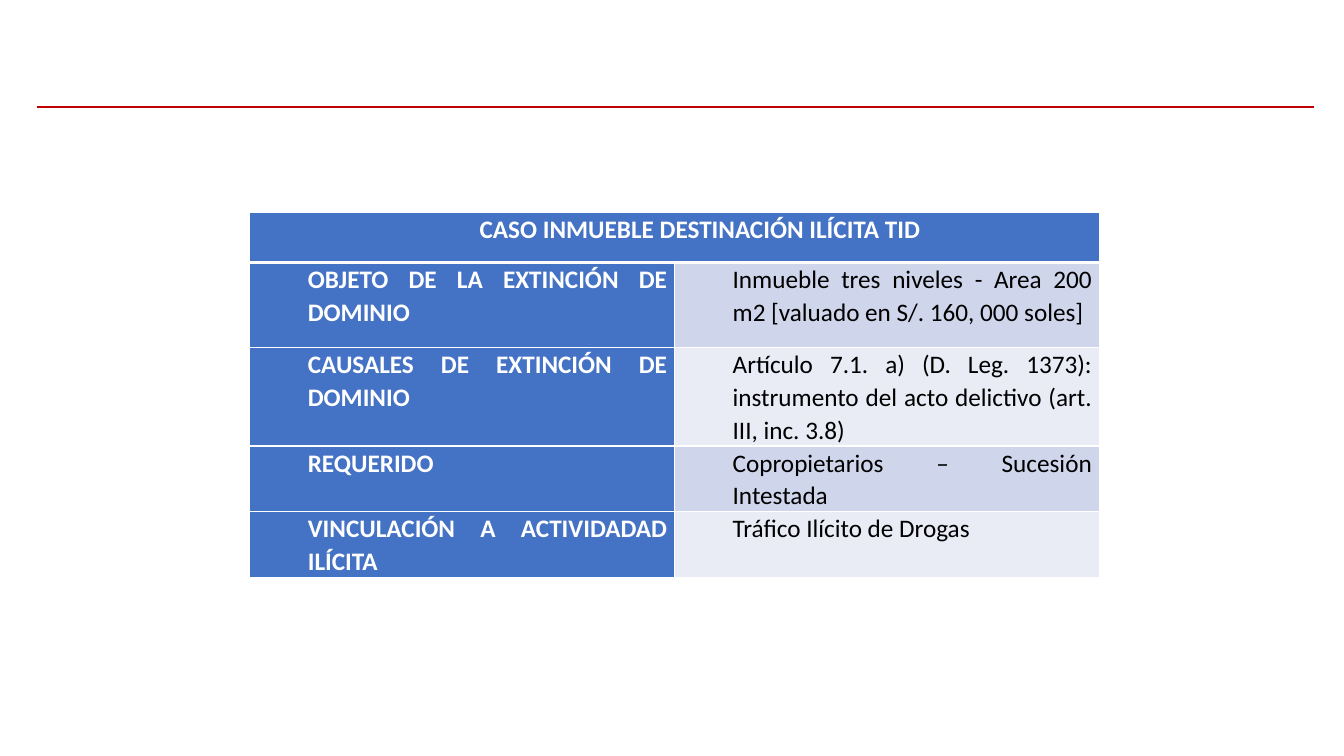
"""Build the slide with the property case table."""
from dataclasses import dataclass

from pptx import Presentation
from pptx.dml.color import RGBColor
from pptx.enum.shapes import MSO_CONNECTOR
from pptx.enum.text import PP_ALIGN
from pptx.oxml.ns import qn
from pptx.util import Pt
from lxml import etree

STRAIGHT = MSO_CONNECTOR.STRAIGHT
CENTER = PP_ALIGN.CENTER
JUSTIFY = PP_ALIGN.JUSTIFY


@dataclass(frozen=True)
class Theme:
    """Colours and type of the slide."""
    font: str = "Calibri"
    size: float = 18
    rule: str = "C00000"
    head: str = "4472C4"
    bands: tuple = ("CFD5EA", "E9EBF5")
    light: str = "FFFFFF"
    dark: str = "000000"


class Page:
    """Draw elements on one slide in one theme."""

    def __init__(self, slide, theme):
        """Keep the slide and its theme."""
        self.slide = slide
        self.theme = theme

    def line(self, left, right, y, width):
        """Draw a level rule."""
        rule = self.slide.shapes.add_connector(
            STRAIGHT, Pt(left), Pt(y), Pt(right), Pt(y))
        rule.line.color.rgb = RGBColor.from_string(self.theme.rule)
        rule.line.width = Pt(width)
        etree.SubElement(rule._element.spPr, qn("a:effectLst"))

    def edge(self, cell, side, width):
        """Draw one border of a cell."""
        props = cell._tc.get_or_add_tcPr()
        line = etree.SubElement(props, qn(f"a:ln{side}"), w=str(Pt(width)))
        fill = etree.SubElement(line, qn("a:solidFill"))
        etree.SubElement(fill, qn("a:srgbClr"), val=self.theme.light)

    def cell(self, cell, text, fill, label, align, after, top=1, bottom=1):
        """Fill one cell with a styled paragraph."""
        for side, width in zip("LRTB", (1, 1, top, bottom)):
            self.edge(cell, side, width)
        cell.fill.solid()
        cell.fill.fore_color.rgb = RGBColor.from_string(fill)
        cell.margin_left = cell.margin_right = Pt(5.4)
        cell.margin_top = cell.margin_bottom = 0
        cell.text = text
        para = cell.text_frame.paragraphs[0]
        para._p.get_or_add_pPr().set("marL", str(Pt(36)))
        para.alignment = align
        para.line_spacing = 1.07
        para.space_after = Pt(after)
        font = para.font
        font.name = self.theme.font
        font.size = Pt(self.theme.size)
        font.bold = label
        color = self.theme.light if label else self.theme.dark
        font.color.rgb = RGBColor.from_string(color)

    def table(self, title, facts, left, top, width, heights):
        """Draw a titled table of labels and facts."""
        theme = self.theme
        grid = self.slide.shapes.add_table(
            len(heights), 2, Pt(left), Pt(top), Pt(width), Pt(sum(heights))).table
        grid.first_row = grid.horz_banding = False
        for row, height in zip(grid.rows, heights):
            row.height = Pt(height)
        grid.cell(0, 0).merge(grid.cell(0, 1))
        self.cell(grid.cell(0, 0), title, theme.head, True, CENTER, 8, bottom=3)
        for row, (name, fact) in enumerate(facts, 1):
            edge = 3 if row == 1 else 1
            band = theme.bands[(row - 1) % 2]
            self.cell(grid.cell(row, 0), name, theme.head, True, JUSTIFY, 0, edge)
            self.cell(grid.cell(row, 1), fact, band, False, JUSTIFY, 8, edge)


FACTS = (
    ("OBJETO DE LA EXTINCIÓN DE DOMINIO",
     "Inmueble tres niveles - Area 200 m2 [valuado en S/. 160, 000 soles]"),
    ("CAUSALES DE EXTINCIÓN DE DOMINIO",
     "Artículo 7.1. a) (D. Leg. 1373): instrumento del acto delictivo "
     "(art. III, inc. 3.8)"),
    ("REQUERIDO", "Copropietarios – Sucesión Intestada"),
    ("VINCULACIÓN A ACTIVIDADAD ILÍCITA", "Tráfico Ilícito de Drogas"),
)


def main():
    """Build and save the deck."""
    deck = Presentation()
    deck.slide_width, deck.slide_height = Pt(960), Pt(540)
    page = Page(deck.slides.add_slide(deck.slide_layouts[6]), Theme())
    page.line(26.6, 938.9, 76.3, 1.5)
    page.table("CASO INMUEBLE DESTINACIÓN ILÍCITA TID", FACTS,
               178.5, 151.5, 607, (36, 60.5, 60.5, 40.3, 40.3))
    deck.save("out.pptx")


if __name__ == "__main__":
    main()
